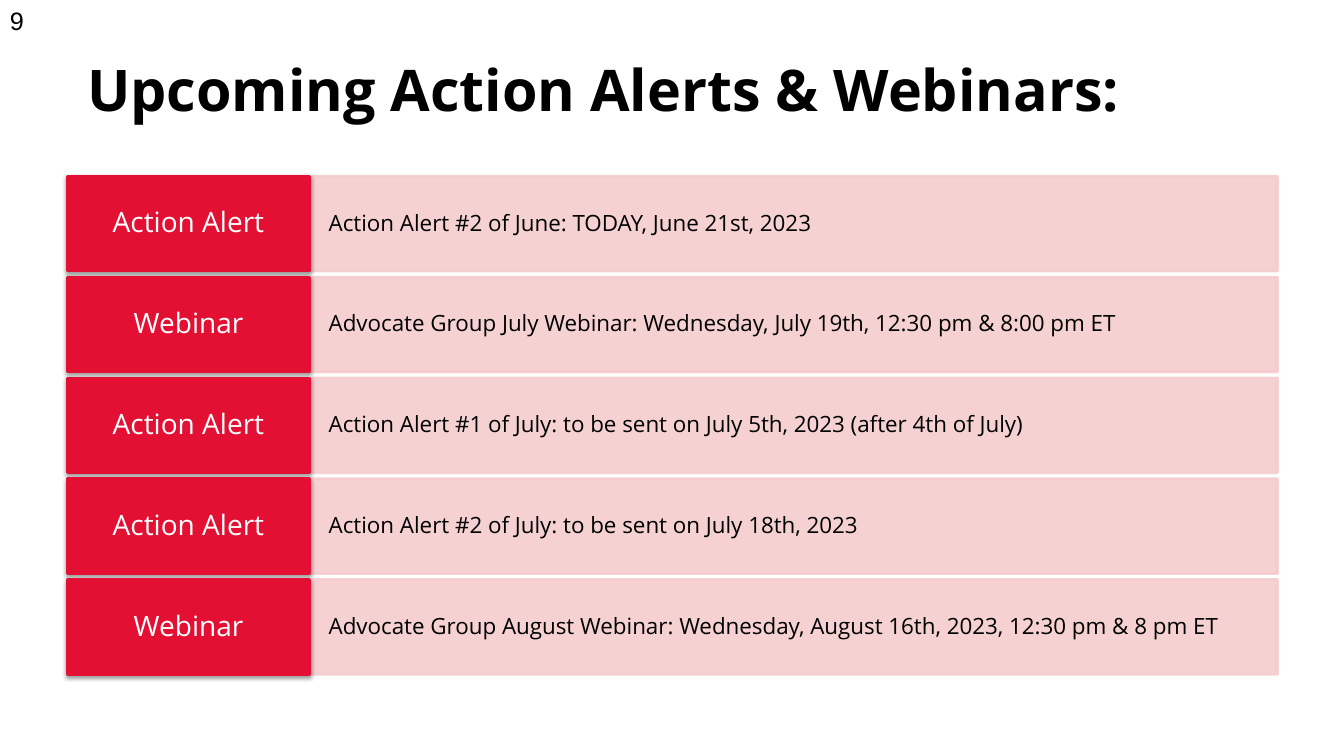
from lxml import etree
from pptx import Presentation
from pptx.dml.color import RGBColor
from pptx.enum import shapes, text
from pptx.oxml import ns
from pptx.util import Inches, Pt

COLORS = {"black": "000000", "white": "FFFFFF", "red": "E41034", "pink": "F5CCCE"}
EVENTS = [
    ("Action Alert", "Action Alert #2 of June: TODAY, June 21st, 2023"),
    ("Webinar", "Advocate Group July Webinar: Wednesday, July 19th, 12:30 pm & 8:00 pm ET"),
    ("Action Alert", "Action Alert #1 of July: to be sent on July 5th, 2023 (after 4th of July)"),
    ("Action Alert", "Action Alert #2 of July: to be sent on July 18th, 2023"),
    ("Webinar", "Advocate Group August Webinar: Wednesday, August 16th, 2023, 12:30 pm & 8 pm ET"),
]
COLUMNS = [
    {"left": 3.07, "width": 9.6, "fill": "pink", "color": "black", "size": 16,
     "align": text.PP_ALIGN.LEFT, "margins": (0.19, 0.24)},
    {"left": 0.67, "width": 2.4, "fill": "red", "color": "white", "size": 20,
     "align": text.PP_ALIGN.CENTER, "margins": (0.13, 0.09)},
]
TOP, PITCH, HEIGHT = 1.75, 1, 0.94


def write(shape, words, size, color, align, margins=(0.1, 0.05), name="Open Sans",
          bold=False, anchor=text.MSO_ANCHOR.MIDDLE, spacing=0.9):
    across, down = map(Inches, margins)
    frame = shape.text_frame
    frame.text = words
    frame_format = {"word_wrap": True, "auto_size": text.MSO_AUTO_SIZE.NONE,
                    "vertical_anchor": anchor, "margin_left": across, "margin_right": across,
                    "margin_top": down, "margin_bottom": down}
    for key, value in frame_format.items():
        setattr(frame, key, value)
    paragraph = frame.paragraphs[0]
    paragraph.alignment = align
    paragraph.line_spacing = spacing
    font = paragraph.runs[0].font
    for key, value in {"name": name, "size": Pt(size), "bold": bold}.items():
        setattr(font, key, value)
    font.color.rgb = RGBColor.from_string(COLORS[color])


def add_child(parent, tag, **attributes):
    return etree.SubElement(parent, ns.qn(tag), {key: str(value) for key, value in attributes.items()})


presentation = Presentation()
presentation.slide_width = Inches(13.33)
presentation.slide_height = Inches(7.5)
slide = presentation.slides.add_slide(presentation.slide_layouts[5])

number = slide.shapes.add_textbox(0, 0, Inches(0.67), Inches(0.4))
write(number, "9", 18, "black", text.PP_ALIGN.LEFT, name="Arial",
      anchor=text.MSO_ANCHOR.TOP, spacing=1.0)

title = slide.shapes.title
for key, value in {"left": 0.67, "top": 0.3, "width": 10.79, "height": 1.25}.items():
    setattr(title, key, Inches(value))
write(title, "Upcoming Action Alerts & Webinars: ", 41, "black", text.PP_ALIGN.CENTER, bold=True)

for row, event in enumerate(EVENTS):
    label, details = event
    for column, words in zip(COLUMNS, (details, label)):
        shape = slide.shapes.add_shape(
            shapes.MSO_SHAPE.RECTANGLE, Inches(column["left"]), Inches(TOP + row * PITCH),
            Inches(column["width"]), Inches(HEIGHT))
        shape.shadow.inherit = False
        shape.fill.solid()
        shape.line.width = Pt(2)
        for paint in (shape.fill.fore_color, shape.line.color):
            paint.rgb = RGBColor.from_string(COLORS[column["fill"]])
        properties = shape.element.spPr
        if column["fill"] == "pink":
            for color in properties.iter(ns.qn("a:srgbClr")):
                add_child(color, "a:alpha", val=90000)
        else:
            effects = properties.find(ns.qn("a:effectLst"))
            shadow = add_child(effects, "a:outerShdw", blurRad=Pt(3.1), dist=Pt(1.6),
                               dir=5400000, algn="ctr", rotWithShape=0)
            color = add_child(shadow, "a:srgbClr", val=COLORS["black"])
            add_child(color, "a:alpha", val=38000)
        write(shape, words, column["size"], column["color"], column["align"], column["margins"])

presentation.save("out.pptx")
